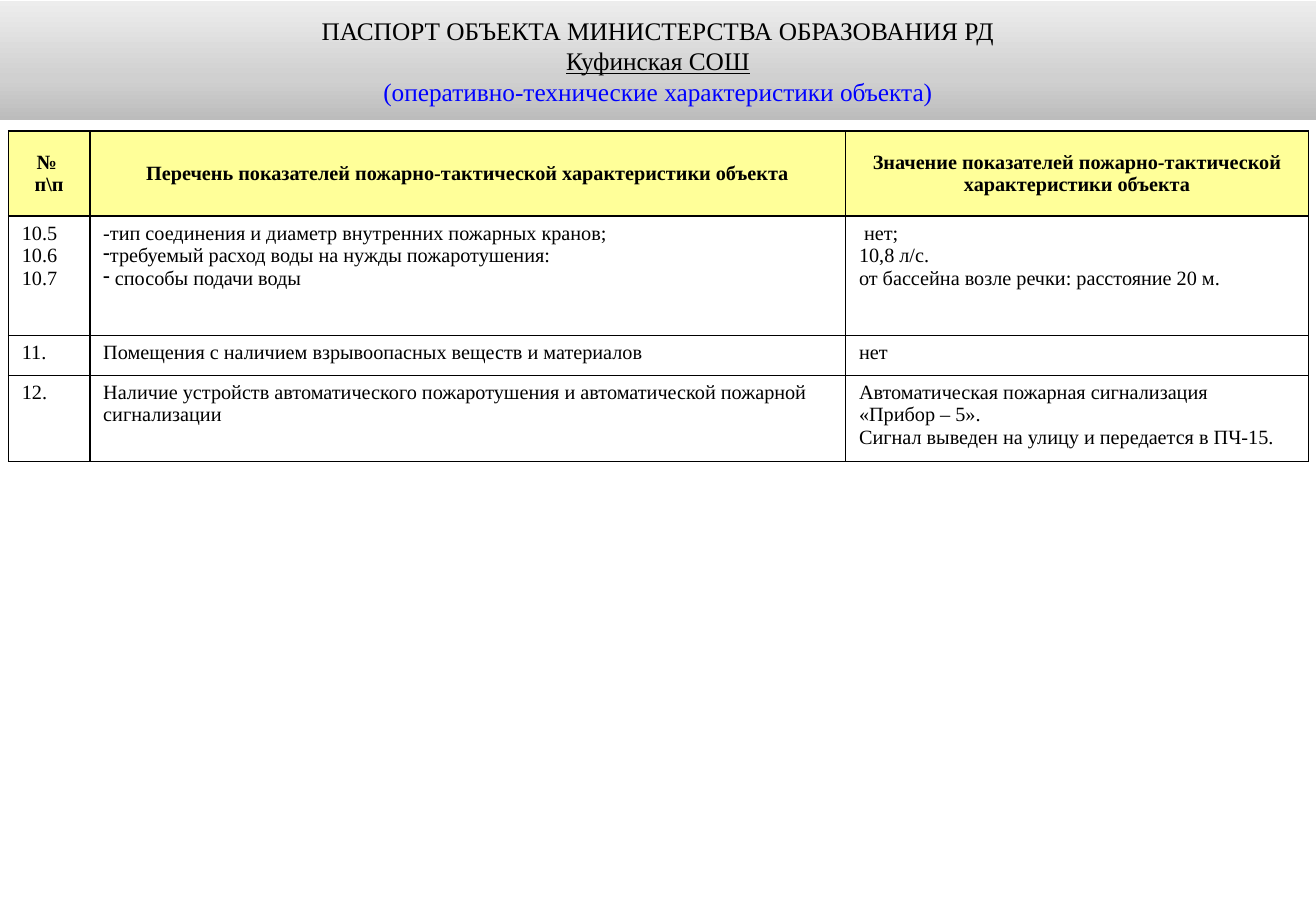
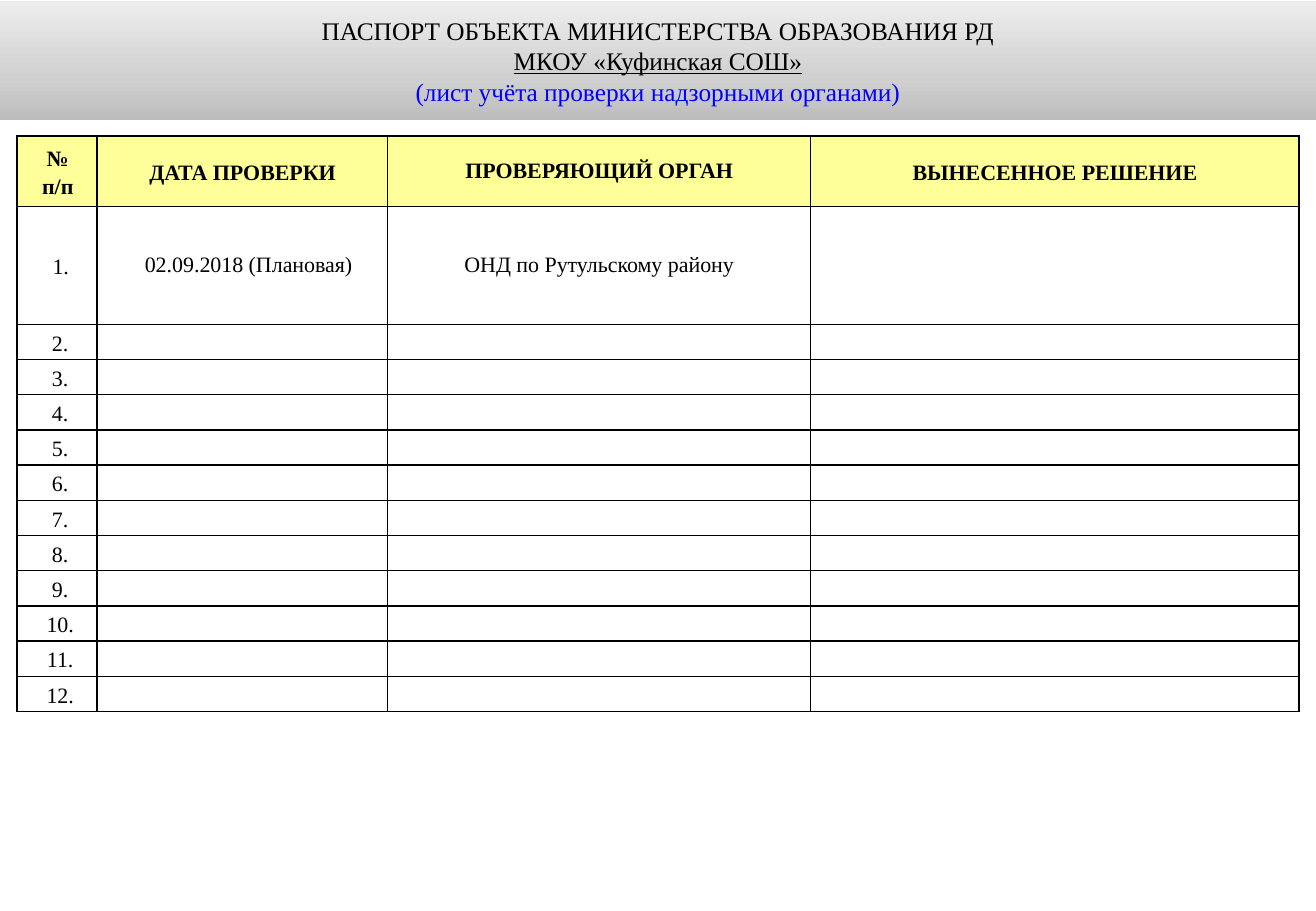
from dataclasses import dataclass
from functools import partial

from lxml.etree import SubElement
from pptx import Presentation
from pptx.dml.color import RGBColor
from pptx.enum.text import MSO_ANCHOR as ANCHOR, MSO_AUTO_SIZE as AUTO, PP_ALIGN as ALIGN
from pptx.oxml import parse_xml
from pptx.oxml.ns import nsdecls, qn
from pptx.util import Pt

PX = 9144
WIDTH, HEIGHT = 1083, 750
FONT = "Times New Roman"
BLACK, WHITE, YELLOW, BLUE = "000000", "FFFFFF", "FFFF99", "0000FF"
BAND_STOPS = ((0, "BCBCBC"), (35, "D0D0D0"), (100, "EDEDED"))


@dataclass
class Para:
    """One paragraph with its formatting."""
    text: str
    size: int = 12
    bold: bool = False
    underline: bool = False
    color: str = BLACK
    align: ALIGN = ALIGN.LEFT
    bullet: str = ""
    indent: int = 0
    spacing: object = 1.0


Head = partial(Para, bold=True, align=ALIGN.CENTER)
TitleLine = partial(Para, size=15, align=ALIGN.CENTER)
Log = partial(Para, size=13, align=ALIGN.CENTER, spacing=1.15)
LogHead = partial(Log, bold=True)


def px(n):
    """Turn px into EMU."""
    return n * PX


def rgb(color):
    """Turn a hex string into a colour."""
    return RGBColor.from_string(color)


def set_insets(frame, horizontal, vertical):
    """Set the four inner margins of a cell or text frame."""
    frame.margin_left = frame.margin_right = px(horizontal)
    frame.margin_top = frame.margin_bottom = px(vertical)


def write_paras(tf, paras):
    """Write the paragraphs into a text frame."""
    for i, para in enumerate(paras):
        p = tf.add_paragraph() if i else tf.paragraphs[0]
        p.alignment = para.align
        p.line_spacing = para.spacing
        p_pr = p._p.get_or_add_pPr()
        p_pr.set("marL", str(px(para.indent)))
        p_pr.set("indent", "0")
        if para.bullet:
            SubElement(p_pr, qn("a:buChar"), char=para.bullet)
        if not para.text:
            SubElement(p._p, qn("a:endParaRPr"), sz=str(para.size * 100))
            continue
        r = p.add_run()
        r.text = para.text
        r.font.name = FONT
        r.font.size = Pt(para.size)
        r.font.bold = para.bold
        r.font.underline = para.underline
        r.font.color.rgb = rgb(para.color)


def set_borders(cell):
    """Draw a thin black line on each side of a cell."""
    tc_pr = cell._tc.get_or_add_tcPr()
    for i, side in enumerate("LRTB"):
        tc_pr.insert(i, parse_xml(
            f'<a:ln{side} {nsdecls("a")} w="{Pt(1)}"><a:solidFill>'
            f'<a:srgbClr val="{BLACK}"/></a:solidFill></a:ln{side}>'))


def add_title(slide, school, subject):
    """Make the title placeholder the grey band with three lines."""
    s = slide.shapes.title
    s.left, s.top, s.width, s.height = 0, px(1), px(WIDTH), px(98)
    stops = "".join(f'<a:gs pos="{pos * 1000}"><a:srgbClr val="{color}"/></a:gs>'
                    for pos, color in BAND_STOPS)
    s._element.spPr.append(parse_xml(
        f'<a:gradFill {nsdecls("a")}><a:gsLst>{stops}</a:gsLst>'
        f'<a:lin ang="{270 * 60000}" scaled="0"/></a:gradFill>'))
    tf = s.text_frame
    tf.word_wrap = True
    tf.auto_size = AUTO.NONE
    tf.vertical_anchor = ANCHOR.MIDDLE
    set_insets(tf, 9, 5)
    write_paras(tf, [
        TitleLine("ПАСПОРТ ОБЪЕКТА МИНИСТЕРСТВА ОБРАЗОВАНИЯ РД"),
        TitleLine(school, underline=True),
        TitleLine(subject, color=BLUE),
    ])


def add_grid(slide, left, top, cols, heights, rows, insets, body_anchor):
    """Add a bordered table with a yellow head row."""
    tbl = slide.shapes.add_table(len(rows), len(cols), px(left), px(top),
                                 px(sum(cols)), px(sum(heights))).table
    tbl.first_row = tbl.horz_banding = False
    for column, width in zip(tbl.columns, cols):
        column.width = px(width)
    for i, (row, height) in enumerate(zip(rows, heights)):
        tbl.rows[i].height = px(height)
        for j, paras in enumerate(row):
            cell = tbl.cell(i, j)
            cell.fill.solid()
            cell.fill.fore_color.rgb = rgb(WHITE if i else YELLOW)
            cell.vertical_anchor = body_anchor if i else ANCHOR.MIDDLE
            set_insets(cell, *insets)
            set_borders(cell)
            write_paras(cell.text_frame, paras)


def add_slide(prs, school, subject):
    """Add a slide with the shared title band."""
    slide = prs.slides.add_slide(prs.slide_layouts[5])
    add_title(slide, school, subject)
    return slide


def build_features(prs):
    """Build the slide of technical features."""
    slide = add_slide(prs, "Куфинская СОШ", "(оперативно-технические характеристики объекта)")
    rows = [
        [[Head("№ "), Head("п\\п")],
         [Head("Перечень показателей пожарно-тактической характеристики объекта")],
         [Head("Значение показателей пожарно-тактической характеристики объекта")]],
        [[Para("10.5"), Para("10.6"), Para("10.7")],
         [Para("-тип соединения и диаметр внутренних пожарных кранов;"),
          Para("требуемый расход воды на нужды пожаротушения:", bullet="-"),
          Para(" способы подачи воды", bullet="-")],
         [Para(" нет;"), Para("10,8 л/с."),
          Para("от бассейна возле речки: расстояние 20 м.")]],
        [[Para("11.")],
         [Para("Помещения с наличием взрывоопасных веществ и материалов")],
         [Para("нет")]],
        [[Para("12.")],
         [Para("Наличие устройств автоматического пожаротушения и "
               "автоматической пожарной сигнализации")],
         [Para("Автоматическая пожарная сигнализация"), Para("«Прибор – 5»."),
          Para("Сигнал выведен на улицу и передается в ПЧ-15.")]],
    ]
    add_grid(slide, 7, 108, [67, 622, 381], [70, 98, 33, 71], rows, (11, 5), ANCHOR.TOP)


def build_inspections(prs):
    """Build the slide of the inspection log."""
    slide = add_slide(prs, "МКОУ «Куфинская СОШ»", "(лист учёта проверки надзорными органами)")
    exact = Pt(14)
    rows = [
        [[LogHead("№", indent=1), LogHead("п/п", indent=1)],
         [LogHead("ДАТА ПРОВЕРКИ")],
         [LogHead("ПРОВЕРЯЮЩИЙ ОРГАН", spacing=exact)],
         [LogHead("ВЫНЕСЕННОЕ РЕШЕНИЕ")]],
        [[Log("1.", indent=6)],
         [Log("02.09.2018 (Плановая)", indent=10, spacing=exact)],
         [Log("ОНД по Рутульскому району", spacing=exact)],
         [Log("")]],
    ]
    rows += [[[Log(f"{n}.", indent=5)]] + [[Log("")]] * 3 for n in range(2, 13)]
    add_grid(slide, 14, 112, [66, 239, 348, 402], [58, 97] + [29] * 11, rows,
             (3, 0), ANCHOR.MIDDLE)


def main():
    """Build and save the presentation."""
    prs = Presentation()
    prs.slide_width, prs.slide_height = px(WIDTH), px(HEIGHT)
    build_features(prs)
    build_inspections(prs)
    prs.save("out.pptx")


if __name__ == "__main__":
    main()
